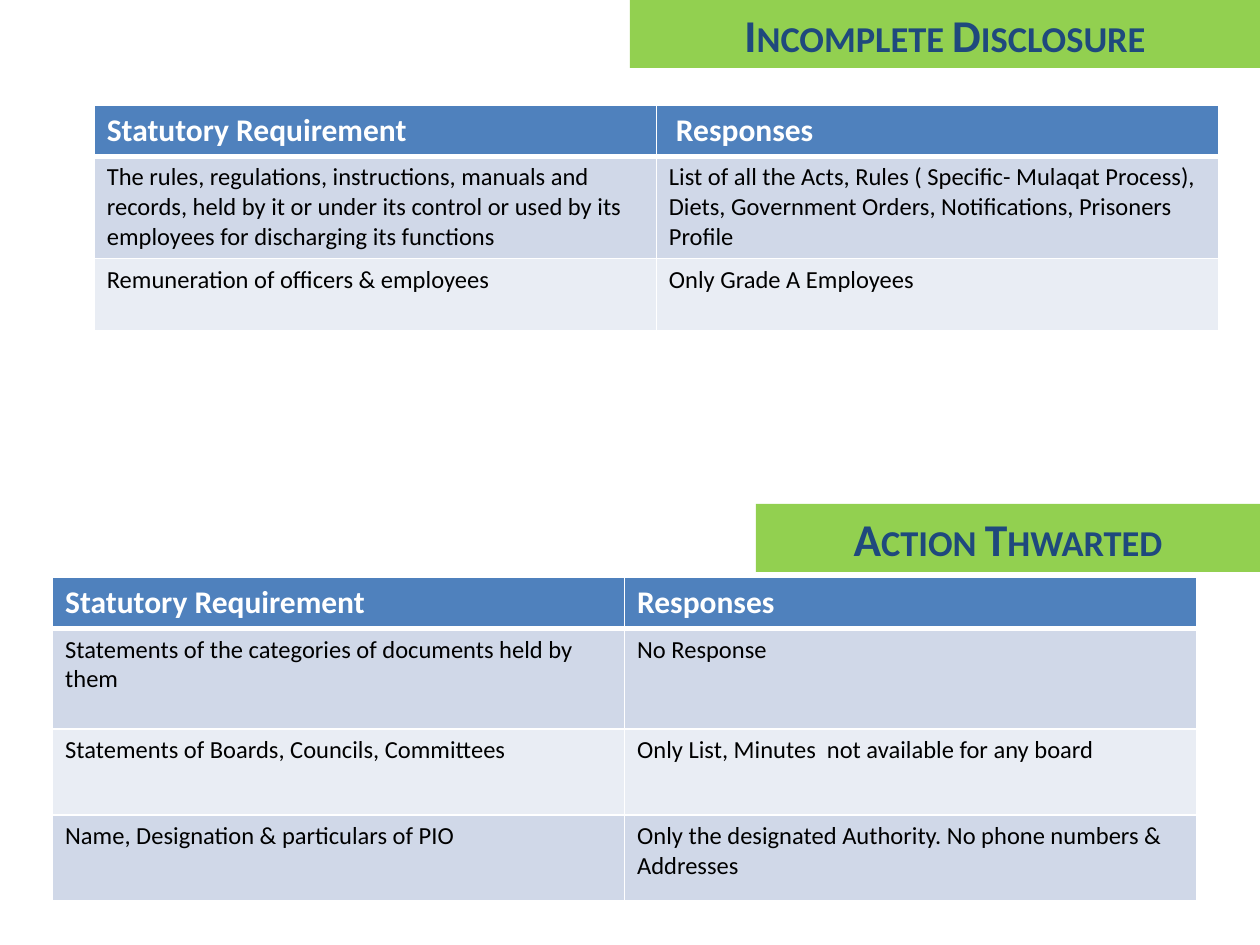
from pptx import Presentation
from pptx.dml.color import RGBColor
from pptx.enum import shapes, text
from pptx.oxml import parse_xml
from pptx.oxml.ns import nsdecls
from pptx.util import Cm, Pt

WHITE = RGBColor(0xFF, 0xFF, 0xFF)
BLACK = RGBColor(0, 0, 0)
BLUE = RGBColor(0x4F, 0x81, 0xBD)
NAVY = RGBColor(0x1F, 0x49, 0x7D)
GREEN = RGBColor(0x92, 0xD0, 0x50)
BANDS = [RGBColor(0xE9, 0xED, 0xF4), RGBColor(0xD0, 0xD8, 0xE8)]

WIDE, HIGH = 25.4, 19.05

PARTS = [
    {
        "title": "Incomplete Disclosure",
        "bar": (12.7, 0),
        "at": (1.9, 2.12),
        "width": 22.66,
        "heights": [1.02, 2.06, 1.45],
        "rows": [
            ("Statutory Requirement", " Responses"),
            ("The rules, regulations, instructions, manuals and records, held by it "
             "or under its control or used by its employees for discharging its functions",
             "List of all the Acts, Rules ( Specific- Mulaqat Process), Diets, "
             "Government Orders, Notifications, Prisoners Profile"),
            ("Remuneration of officers & employees", "Only Grade A Employees"),
        ],
    },
    {
        "title": "Action Thwarted",
        "bar": (15.24, 10.16),
        "at": (1.06, 11.64),
        "width": 23.06,
        "heights": [1.02, 2.03, 1.73, 1.73],
        "rows": [
            ("Statutory Requirement", "Responses"),
            ("Statements of the categories of documents held by them", "No Response"),
            ("Statements of Boards, Councils, Committees",
             "Only List, Minutes  not available for any board"),
            ("Name, Designation & particulars of PIO",
             "Only the designated Authority. No phone numbers & Addresses"),
        ],
    },
]


def write(frame, words, size, color, bold=False, align=None, small=False):
    para = frame.paragraphs[0]
    para.alignment = align
    run = para.add_run()
    run.text = words
    font = run.font
    font.name, font.size, font.bold = "Calibri", Pt(size), bold
    font.color.rgb = color
    if small:
        run._r.get_or_add_rPr().set("cap", "small")


def edge(cell, head):
    props = cell._tc.get_or_add_tcPr()
    for side in "LRTB":
        width = Pt(3 if head and side == "B" else 1)
        props.append(parse_xml(
            f'<a:ln{side} {nsdecls("a")} w="{width}"><a:solidFill>'
            f'<a:srgbClr val="{WHITE}"/></a:solidFill></a:ln{side}>'))


def add_bar(slide, part):
    left, top = part["bar"]
    bar = slide.shapes.add_shape(shapes.MSO_SHAPE.RECTANGLE, Cm(left), Cm(top),
                                 Cm(WIDE - left), Cm(1.37))
    bar.shadow.inherit = False
    bar.fill.solid()
    bar.fill.fore_color.rgb = GREEN
    bar.line.fill.background()
    frame = bar.text_frame
    frame.word_wrap = True
    frame.vertical_anchor = text.MSO_ANCHOR.MIDDLE
    write(frame, part["title"], 26, NAVY, bold=True,
          align=text.PP_ALIGN.CENTER, small=True)


def add_grid(slide, part):
    rows, tall = part["rows"], part["heights"]
    left, top = part["at"]
    grid = slide.shapes.add_table(len(rows), 2, Cm(left), Cm(top),
                                  Cm(part["width"]), Cm(sum(tall))).table
    for i, row in enumerate(rows):
        grid.rows[i].height = Cm(tall[i])
        head = i == 0
        for j, words in enumerate(row):
            cell = grid.cell(i, j)
            edge(cell, head)
            cell.fill.solid()
            cell.fill.fore_color.rgb = BLUE if head else BANDS[i % 2]
            write(cell.text_frame, words, 18 if head else 14,
                  WHITE if head else BLACK, bold=head)


def main():
    deck = Presentation()
    deck.slide_width, deck.slide_height = Cm(WIDE), Cm(HIGH)
    slide = deck.slides.add_slide(deck.slide_layouts[6])
    for part in PARTS:
        add_grid(slide, part)
        add_bar(slide, part)
    deck.save("out.pptx")


if __name__ == "__main__":
    main()
